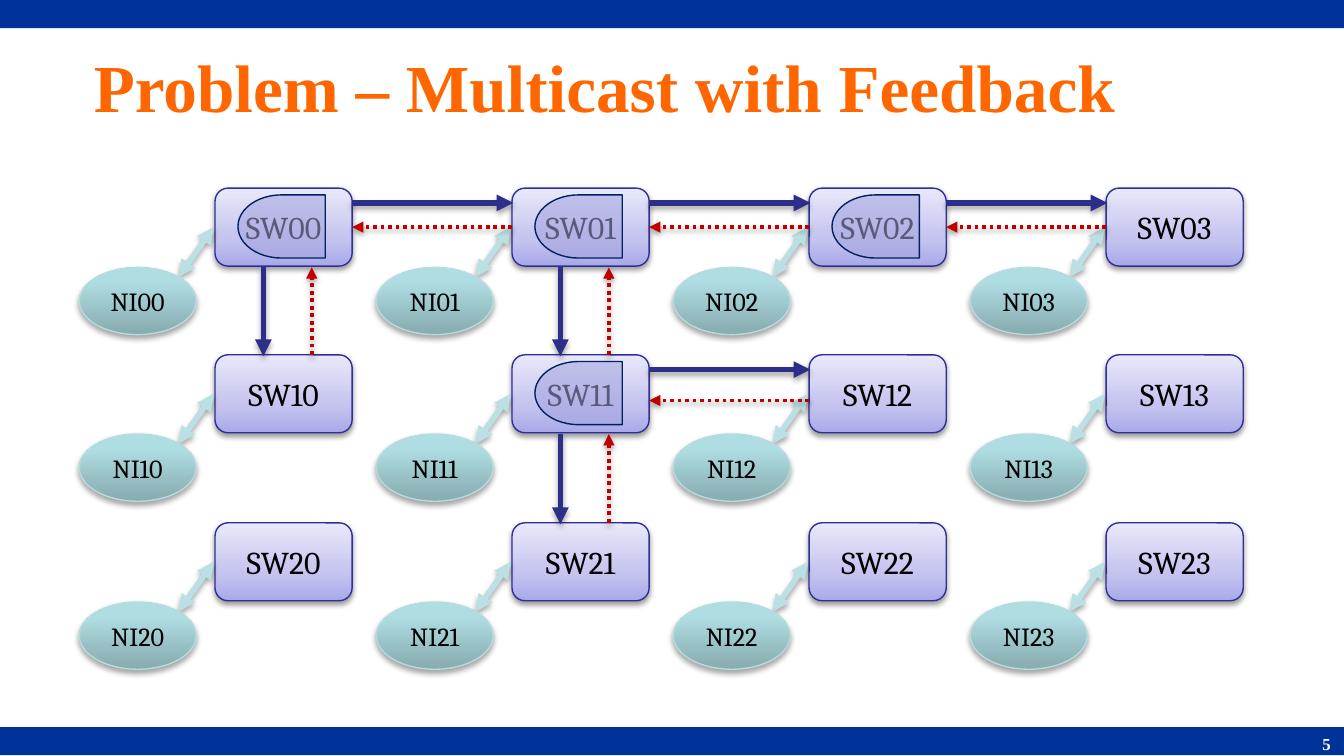
from lxml.etree import SubElement
from pptx import Presentation
from pptx.dml.color import RGBColor
from pptx.enum.dml import MSO_LINE
from pptx.enum.shapes import MSO_CONNECTOR, MSO_SHAPE
from pptx.enum.text import MSO_ANCHOR, PP_ALIGN
from pptx.oxml.ns import qn
from pptx.util import Inches, Pt

TITLE = "Problem – Multicast with Feedback"
PAGE = "5"
ROW_TOPS = (1.4, 2.64, 3.89)
COL_LEFTS = (1.6, 3.81, 6.02, 8.23)
SW_W, SW_H = 1.02, 0.58
NI_W, NI_H = 0.87, 0.5

# Multicast tree: (row, column) of the sender, (row, column) of the receiver
LINKS = [
    ((0, 0), (0, 1)), ((0, 1), (0, 2)), ((0, 2), (0, 3)), ((1, 1), (1, 2)),
    ((0, 0), (1, 0)), ((0, 1), (1, 1)), ((1, 1), (2, 1)),
]
FEEDBACK_DROP = (0.29, 0.34)  # below the switch top, by row
DELAYED = [(0, 2), (0, 1), (1, 1), (0, 0)]

# Gradient stops (percent, colour) run from bottom to top
SWITCH_FILL = [(0, "A9A9E9"), (35, "C4C4EF"), (100, "E8E8FA")]
NI_FILL = [(0, "87ABAE"), (80, "AFDEE2"), (100, "AFE0E4")]
# Shadow: opacity percent, distance in points
SOFT, DEEP = (38, 1.6), (35, 1.8)


def rgb(hex_color):
    return RGBColor.from_string(hex_color)


def add(parent, tag, **attrs):
    return SubElement(parent, qn(tag), {k: str(v) for k, v in attrs.items()})


def set_shadow(sp, shadow):
    spPr = sp._element.spPr
    effects = spPr.find(qn("a:effectLst"))
    if effects is None:
        effects = add(spPr, "a:effectLst")
    if shadow:
        opacity, dist = shadow
        outer = add(effects, "a:outerShdw", blurRad=Pt(3.1), dist=Pt(dist),
                    dir=5400000, rotWithShape=0)
        color = add(outer, "a:srgbClr", val="000000")
        add(color, "a:alpha", val=opacity * 1000)


def set_gradient(sp, stops):
    sp.fill.gradient()
    grad = sp._element.spPr.find(qn("a:gradFill"))
    for child in list(grad):
        grad.remove(child)
    gs_list = add(grad, "a:gsLst")
    for pos, color in stops:
        add(add(gs_list, "a:gs", pos=pos * 1000), "a:srgbClr", val=color)
    add(grad, "a:lin", ang=16200000, scaled=0)


def add_shape(s, kind, x, y, w, h, fill, line=None, shadow=None, opacity=None):
    """Fill is one colour or a list of gradient stops."""
    sp = s.shapes.add_shape(kind, Inches(x), Inches(y), Inches(w), Inches(h))
    sp.shadow.inherit = False
    if isinstance(fill, str):
        sp.fill.solid()
        sp.fill.fore_color.rgb = rgb(fill)
        if opacity:
            color = sp._element.spPr.find(qn("a:solidFill"))[0]
            add(color, "a:alpha", val=opacity * 1000)
    else:
        set_gradient(sp, fill)
    if line:
        sp.line.color.rgb = rgb(line)
        sp.line.width = Pt(0.75)
    else:
        sp.line.fill.background()
    set_shadow(sp, shadow)
    return sp


def add_arrow(s, start, end, color, width, shadow, dotted=False, both=False):
    c = s.shapes.add_connector(MSO_CONNECTOR.STRAIGHT, *map(Inches, start + end))
    c.line.color.rgb = rgb(color)
    c.line.width = Pt(width)
    if dotted:
        c.line.dash_style = MSO_LINE.ROUND_DOT
    ln = c._element.spPr.find(qn("a:ln"))
    if both:
        add(ln, "a:headEnd", type="triangle")
    add(ln, "a:tailEnd", type="triangle")
    set_shadow(c, shadow)


def write(sp, text, size, font="Cambria", color="000000", bold=False,
          align=PP_ALIGN.CENTER, wrap=False):
    tf = sp.text_frame
    tf.word_wrap = wrap
    tf.vertical_anchor = MSO_ANCHOR.MIDDLE
    p = tf.paragraphs[0]
    p.alignment = align
    r = p.add_run()
    r.text = text
    r.font.size, r.font.name, r.font.bold = Pt(size), font, bold
    r.font.color.rgb = rgb(color)


def add_text(s, x, y, w, h, text, size, **fmt):
    box = s.shapes.add_textbox(Inches(x), Inches(y), Inches(w), Inches(h))
    write(box, text, size, font="Times New Roman", bold=True, wrap=True, **fmt)


def add_node(s, row, col):
    """Draw a switch with its network interface."""
    x, y = COL_LEFTS[col], ROW_TOPS[row]
    switch = add_shape(s, MSO_SHAPE.ROUNDED_RECTANGLE, x, y, SW_W, SW_H,
                       SWITCH_FILL, "2F2F98", SOFT)
    write(switch, f"SW{row}{col}", 17)
    add_arrow(s, (x - 0.27, y + 0.66), (x - 0.01, y + 0.29), "BBE0E3", 3, DEEP,
              both=True)
    ni = add_shape(s, MSO_SHAPE.OVAL, x - 1.01, y + 0.59, NI_W, NI_H,
                   NI_FILL, "B6DCDF", DEEP)
    write(ni, f"NI{row}{col}", 14)


def link_ends(sender, receiver, feedback):
    (row, col), (row2, col2) = sender, receiver
    x, y = COL_LEFTS[col], ROW_TOPS[row]
    if row == row2:
        drop = FEEDBACK_DROP[row] if feedback else 0.11
        overlap = 0 if feedback else 0.01
        near, far = (x + SW_W, y + drop), (COL_LEFTS[col2] + overlap, y + drop)
    else:
        shift, overlap = (0.72, 0) if feedback else (0.36, 0.01)
        near = (x + shift, y + SW_H + 0.01)
        far = (x + shift, ROW_TOPS[row2] + overlap)
    return (far, near) if feedback else (near, far)


prs = Presentation()
prs.slide_width, prs.slide_height = Inches(10), Inches(10 * 9 / 16)
s = prs.slides.add_slide(prs.slide_layouts[6])

for top in (5.41, 0):
    add_shape(s, MSO_SHAPE.RECTANGLE, 0, top, 10, 0.21, "003399")
add_text(s, 0.6, 0.21, 7.9, 0.85, TITLE, 36, color="FF6600", align=PP_ALIGN.LEFT)
add_text(s, 7.92, 5.44, 2.08, 0.19, PAGE, 9, color="FFFFFF", align=PP_ALIGN.RIGHT)

for col in range(len(COL_LEFTS)):
    for row in range(len(ROW_TOPS)):
        add_node(s, row, col)
for link in LINKS:
    add_arrow(s, *link_ends(*link, feedback=False), "2D2D8A", 3, DEEP)
for link in LINKS:
    add_arrow(s, *link_ends(*link, feedback=True), "C00000", 2, SOFT, dotted=True)
for row, col in DELAYED:
    delay = add_shape(s, MSO_SHAPE.FLOWCHART_DELAY, COL_LEFTS[col] + 0.17,
                      ROW_TOPS[row] + 0.05, 0.65, 0.47, "A3A3E0", "002060",
                      opacity=55)
    delay.rotation = 180

prs.save("out.pptx")
